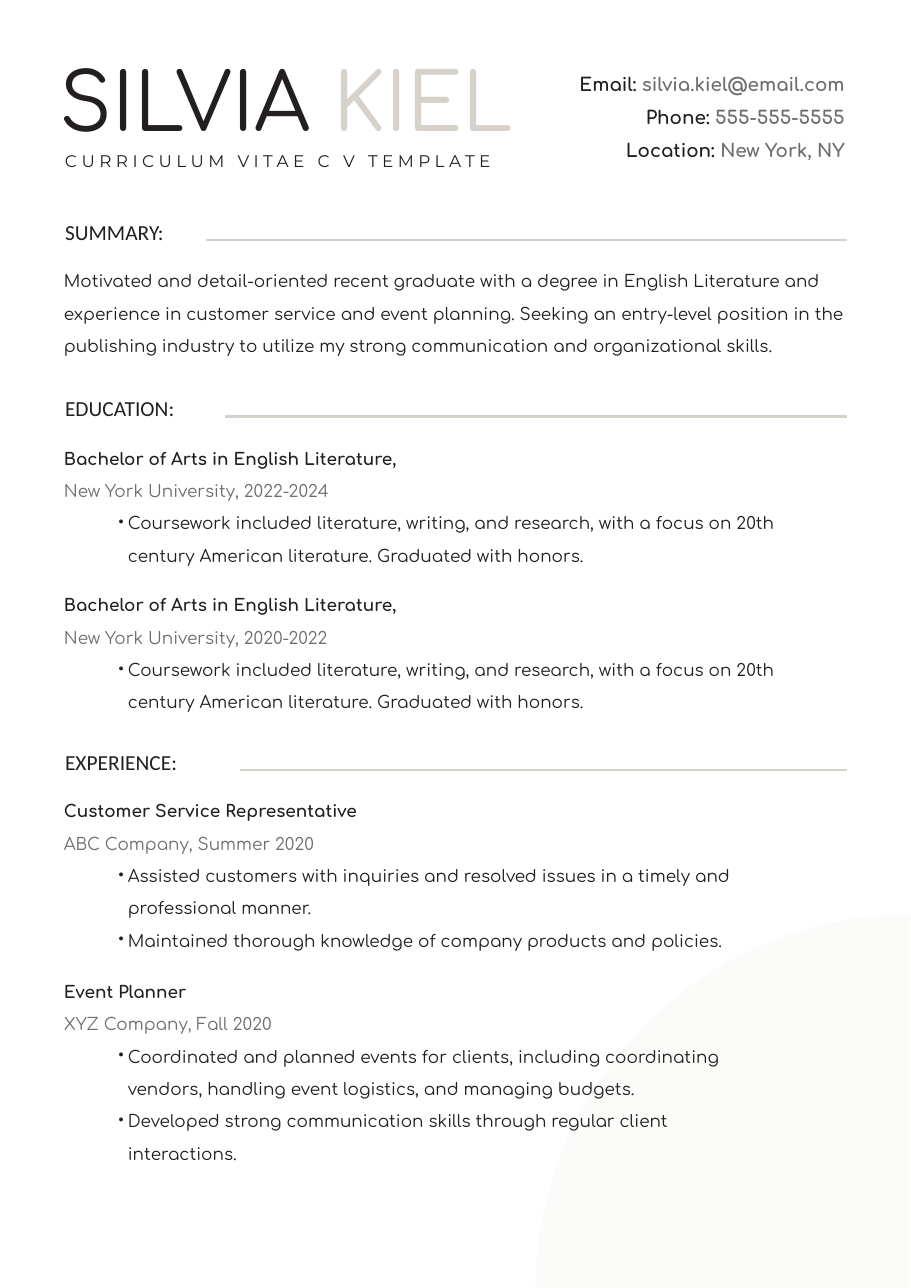
"""Build a one-page curriculum vitae slide."""
from dataclasses import dataclass

from lxml import etree
from pptx import Presentation
from pptx.dml.color import RGBColor
from pptx.enum.shapes import MSO_CONNECTOR, MSO_SHAPE
from pptx.enum.text import MSO_AUTO_SIZE, PP_ALIGN
from pptx.oxml.ns import qn
from pptx.util import Inches, Pt


@dataclass(frozen=True)
class Theme:
    """Colours, fonts and type sizes of the page."""
    ink: str = "231F20"
    grey: str = "6D6E71"
    sand: str = "D7D1CB"
    pale: str = "FBFBF9"
    body_font: str = "Comfortaa"
    heading_font: str = "Calibri"
    tagline_font: str = "Montserrat"
    name_size: float = 52
    heading_size: float = 14
    contact_size: float = 12
    body_size: float = 11
    body_spacing: float = 1.6
    contact_spacing: float = 1.5


THEME = Theme()
LEFT, HEADING_LEFT, RULE_RIGHT = 0.58, 0.59, 7.69
LINE_HEIGHT = 0.29

CONTACTS = [
    ("Email: ", "silvia.kiel@email.com"),
    ("Phone: ", "555-555-5555"),
    ("Location: ", "New York, NY"),
]
SUMMARY = (
    "Motivated and detail-oriented recent graduate with a degree in English "
    "Literature and experience in customer service and event planning. Seeking "
    "an entry-level position in the publishing industry to utilize my strong "
    "communication and organizational skills."
)
HEADINGS = [
    ("SUMMARY:", 1.99, 1.87),
    ("EDUCATION:", 3.59, 2.04),
    ("EXPERIENCE:", 6.8, 2.18),
]
DEGREE = "Bachelor of Arts in English Literature,"
COURSEWORK = (
    "Coursework included literature, writing, and research, with a focus on "
    "20th century American literature. Graduated with honors."
)
ENTRIES = [
    (3.96, DEGREE, "New York University, 2022-2024", [COURSEWORK]),
    (5.29, DEGREE, "New York University, 2020-2022", [COURSEWORK]),
    (7.16, "Customer Service Representative", "ABC Company, Summer 2020", [
        "Assisted customers with inquiries and resolved issues in a timely and "
        "professional manner.",
        "Maintained thorough knowledge of company products and policies.",
    ]),
    (8.8, "Event Planner", "XYZ Company, Fall 2020", [
        "Coordinated and planned events for clients, including coordinating "
        "vendors, handling event logistics, and managing budgets.",
        "Developed strong communication skills through regular client "
        "interactions.",
    ]),
]


def rgb(colour):
    """Turn a hex string into a colour."""
    return RGBColor.from_string(colour)


def add_box(slide, left, top, width, height):
    """Add a wrapping text box without insets and return its text frame."""
    tf = slide.shapes.add_textbox(
        Inches(left), Inches(top), Inches(width), Inches(height)).text_frame
    tf.word_wrap = True
    tf.auto_size = MSO_AUTO_SIZE.SHAPE_TO_FIT_TEXT
    tf.margin_left = tf.margin_right = tf.margin_top = tf.margin_bottom = 0
    return tf


def add_run(p, text, size, colour=THEME.ink, font=THEME.body_font, bold=False):
    """Append a formatted run to a paragraph."""
    r = p.add_run()
    r.text = text
    r.font.size = Pt(size)
    r.font.name = font
    r.font.bold = bold
    r.font.color.rgb = rgb(colour)
    return r


def next_paragraph(tf):
    """Return the first paragraph while it is empty, else a new one."""
    first = tf.paragraphs[0]
    return tf.add_paragraph() if first.runs else first


def add_body(tf, text, colour=THEME.ink, bold=False, bullet=False):
    """Add a paragraph of body text, bulleted on request."""
    p = next_paragraph(tf)
    if bullet:
        pPr = p._p.get_or_add_pPr()
        pPr.set("marL", str(Inches(0.58)))
        pPr.set("indent", str(-Inches(0.09)))
        etree.SubElement(pPr, qn("a:buFont"), typeface=THEME.body_font)
        etree.SubElement(pPr, qn("a:buChar"), char="•")
    p.line_spacing = THEME.body_spacing
    add_run(p, text, THEME.body_size, colour, bold=bold)


def add_corner(slide):
    """Add the pale quarter disc in the bottom right corner."""
    sp = slide.shapes.add_shape(
        MSO_SHAPE.PIE, Inches(4.86), Inches(8.3), Inches(6.81), Inches(6.81))
    sp.adjustments[0] = 108
    sp.adjustments[1] = 162
    sp.shadow.inherit = False
    sp.fill.solid()
    sp.fill.fore_color.rgb = rgb(THEME.pale)
    sp.line.fill.background()


def add_header(slide):
    """Add the name, the tagline and the contact lines."""
    p = add_box(slide, 0.54, 0.47, 4.46, 0.88).paragraphs[0]
    add_run(p, "SILVIA ", THEME.name_size)
    add_run(p, "KIEL", THEME.name_size, THEME.sand)

    p = add_box(slide, HEADING_LEFT, 1.37, 4.46, 0.19).paragraphs[0]
    r = add_run(p, "CURRICULUM VITAE C V TEMPLATE", THEME.body_size,
                font=THEME.tagline_font)
    r.font._element.set("spc", "290")

    tf = add_box(slide, 5.2, 0.56, 2.47, 0.81)
    for label, value in CONTACTS:
        p = next_paragraph(tf)
        p.alignment = PP_ALIGN.RIGHT
        p.line_spacing = THEME.contact_spacing
        add_run(p, label, THEME.contact_size, bold=True)
        add_run(p, value, THEME.contact_size, THEME.grey, bold=True)


def add_heading(slide, text, top, rule_left):
    """Add a section heading followed by a rule to the right margin."""
    tf = add_box(slide, HEADING_LEFT, top, rule_left - HEADING_LEFT, 0.24)
    add_run(tf.paragraphs[0], text, THEME.heading_size, font=THEME.heading_font)
    y = Inches(top + 0.19)
    rule = slide.shapes.add_connector(
        MSO_CONNECTOR.STRAIGHT, Inches(rule_left), y, Inches(RULE_RIGHT), y)
    rule.line.color.rgb = rgb(THEME.sand)
    rule.line.width = Pt(1.5)
    etree.SubElement(rule._element.spPr, qn("a:effectLst"))


def add_entry(slide, top, title, place, duties):
    """Add a degree or job with its place and bullet points."""
    tf = add_box(slide, LEFT, top, 6.49, LINE_HEIGHT * (2 + 2 * len(duties)))
    add_body(tf, title, bold=True)
    add_body(tf, place, THEME.grey)
    for duty in duties:
        add_body(tf, duty, bullet=True)


def main():
    """Build and save the page."""
    prs = Presentation()
    prs.slide_width, prs.slide_height = Inches(8.27), Inches(11.69)
    slide = prs.slides.add_slide(prs.slide_layouts[6])
    add_corner(slide)
    add_header(slide)
    for heading in HEADINGS:
        add_heading(slide, *heading)
    add_body(add_box(slide, LEFT, 2.35, 7.09, 0.78), SUMMARY)
    for entry in ENTRIES:
        add_entry(slide, *entry)
    prs.save("out.pptx")


if __name__ == "__main__":
    main()
